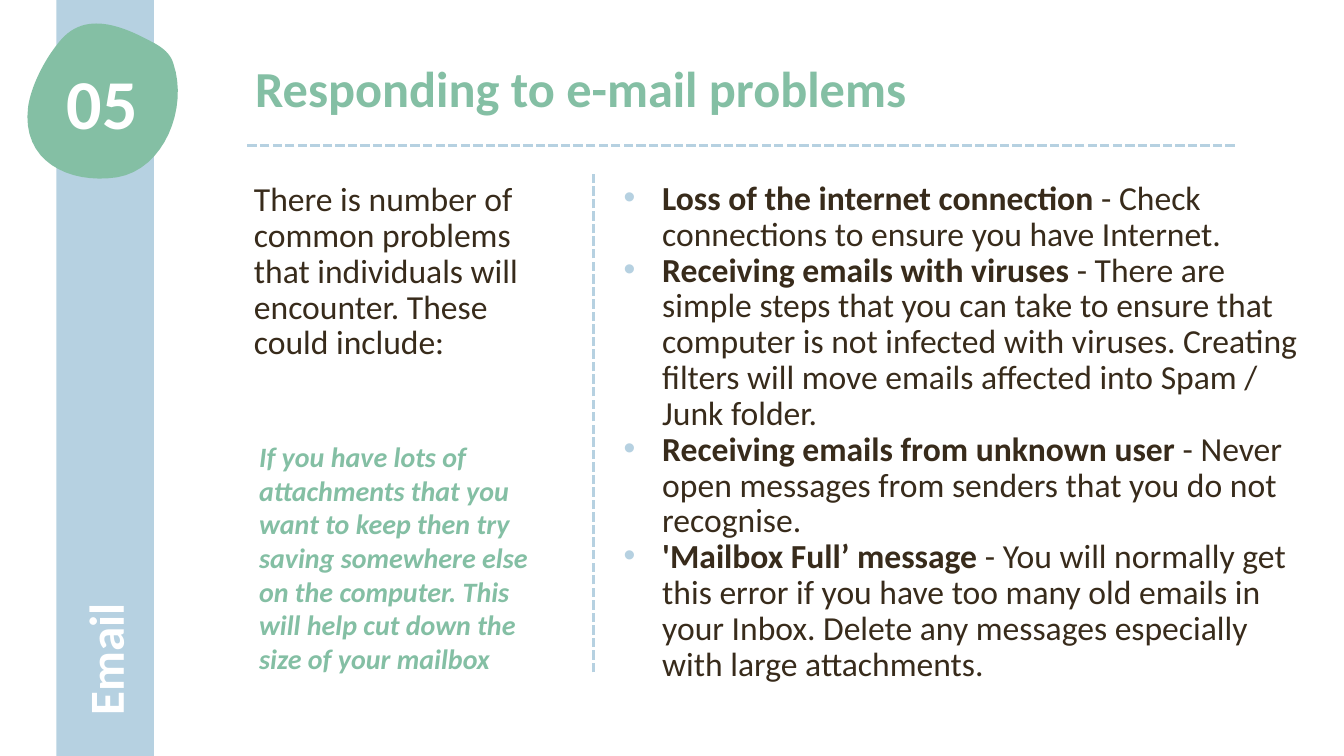
from lxml.etree import SubElement
from pptx import Presentation
from pptx.dml.color import RGBColor
from pptx.enum.dml import MSO_LINE
from pptx.enum.shapes import MSO_CONNECTOR, MSO_SHAPE
from pptx.enum.text import PP_ALIGN
from pptx.oxml.ns import qn
from pptx.util import Cm, Pt

BLUE, GREEN, BROWN, WHITE = "B6D1E1", "84BFA4", "382B1B", "FFFFFF"


def color(value):
    return RGBColor.from_string(value)


def add_text(box, paragraphs, size, text_color, bold=None, italic=None,
             spacing=None, indent=(0, 0), bullet=None):
    """Add a text box; each paragraph is a list of (text, bold) runs."""
    shape = slide.shapes.add_textbox(*map(Cm, box))
    frame = shape.text_frame
    frame.word_wrap = True
    frame.margin_left = frame.margin_right = Cm(0.23)
    frame.margin_top = frame.margin_bottom = Cm(0.18)
    for index, runs in enumerate(paragraphs):
        paragraph = frame.add_paragraph() if index else frame.paragraphs[0]
        if spacing:
            paragraph.line_spacing = spacing
        properties = paragraph._p.get_or_add_pPr()
        properties.set("marL", str(Cm(indent[0])))
        properties.set("indent", str(Cm(indent[1])))
        if bullet:
            bullet_color = SubElement(properties, qn("a:buClr"))
            SubElement(bullet_color, qn("a:srgbClr")).set("val", bullet)
            SubElement(properties, qn("a:buFont")).set("typeface", "Arial")
            SubElement(properties, qn("a:buChar")).set("char", "•")
        font = paragraph.font
        font.name, font.size = "Calibri", Pt(size)
        font.color.rgb = color(text_color)
        font.bold, font.italic = bold, italic
        for text, run_bold in runs:
            run = paragraph.add_run()
            run.text = text
            run.font.bold = run_bold
    return shape


presentation = Presentation()
presentation.slide_width, presentation.slide_height = Cm(33.87), Cm(19.05)
slide = presentation.slides.add_slide(presentation.slide_layouts[6])

# Side bar and number badge
bar = slide.shapes.add_shape(MSO_SHAPE.RECTANGLE, Cm(1.42), 0, Cm(2.46), Cm(19.05))

badge_start = (3.0, 0.69)
badge_curves = [
    ((2.49, 0.53), (1.96, 0.53), (1.55, 0.99)),
    ((1.17, 1.42), (0.79, 2.13), (0.71, 2.69)),
    ((0.53, 4.06), (1.73, 4.65), (2.95, 4.47)),
    ((4.14, 4.27), (4.75, 2.72), (4.37, 1.6)),
    ((4.27, 1.27), (3.96, 1.12), (3.66, 0.97)),
    ((3.45, 0.86), (3.23, 0.76), badge_start),
]
steps = 16
outline = []
start = badge_start
for first, second, end in badge_curves:
    for step in range(1, steps + 1):
        t = step / steps
        outline.append([
            Cm((1 - t) ** 3 * a + 3 * (1 - t) ** 2 * t * b
               + 3 * (1 - t) * t ** 2 * c + t ** 3 * d)
            for a, b, c, d in zip(start, first, second, end)
        ])
    start = end
builder = slide.shapes.build_freeform(*map(Cm, badge_start))
builder.add_line_segments(outline, close=True)
badge = builder.convert_to_shape()

for shape, fill in ((bar, BLUE), (badge, GREEN)):
    shape.shadow.inherit = False
    shape.fill.solid()
    shape.fill.fore_color.rgb = color(fill)
    shape.line.fill.background()

section = add_text((-8, 6.68, 21.34, 1.8), [[("Email", None)]], 35, WHITE,
                   bold=True, spacing=Pt(40.2))
section.rotation = 270
number = add_text((0.43, 1.55, 4.29, 2.39), [[("05", None)]], 50, WHITE,
                  bold=True, spacing=0.9)
number.text_frame.paragraphs[0].alignment = PP_ALIGN.CENTER

# Title and dashed rules
add_text((6.2, 1.88, 24.03, 1.3), [[("Responding to e-mail problems", None)]],
         36, GREEN, bold=True, spacing=Pt(25.6))
for ends in ((31.12, 3.66, 6.17, 3.66), (14.96, 16.94, 14.96, 4.34)):
    rule = slide.shapes.add_connector(MSO_CONNECTOR.STRAIGHT, *map(Cm, ends))
    rule.line.color.rgb = color(BLUE)
    rule.line.width = Pt(2.25)
    rule.line.dash_style = MSO_LINE.SQUARE_DOT
    SubElement(rule._element.spPr, qn("a:effectLst"))

# Introduction, problems and tip
introduction = ("There is number of common problems that individuals will "
                "encounter. These could include:")
add_text((6.12, 4.42, 8.2, 11.35), [[(introduction, None)]], 24, BROWN,
         spacing=Pt(25.6), indent=(0.05, 0))

problems = [
    ("Loss of the internet connection ",
     "- Check connections to ensure you have Internet."),
    ("Receiving emails with viruses ",
     "- There are simple steps that you can take to ensure that computer is not "
     "infected with viruses. Creating filters will move emails affected into "
     "Spam / Junk folder."),
    ("Receiving emails from unknown user ",
     "- Never open messages from senders that you do not recognise."),
    ("'Mailbox Full’ message ",
     "- You will normally get this error if you have too many old emails in your "
     "Inbox. Delete any messages especially with large attachments."),
]
add_text((15.47, 4.39, 17.78, 11.35),
         [[(problem, True), (advice, False)] for problem, advice in problems],
         24, BROWN, spacing=Pt(25.6), indent=(0.99, -0.97), bullet=BLUE)

tip = ("If you have lots of attachments that you want to keep then try saving "
       "somewhere else on the computer. This will help cut down the size of your "
       "mailbox")
add_text((6.3, 10.9, 7.72, 6.25), [[(tip, None)]], 20, GREEN, bold=True, italic=True)

presentation.save("out.pptx")
